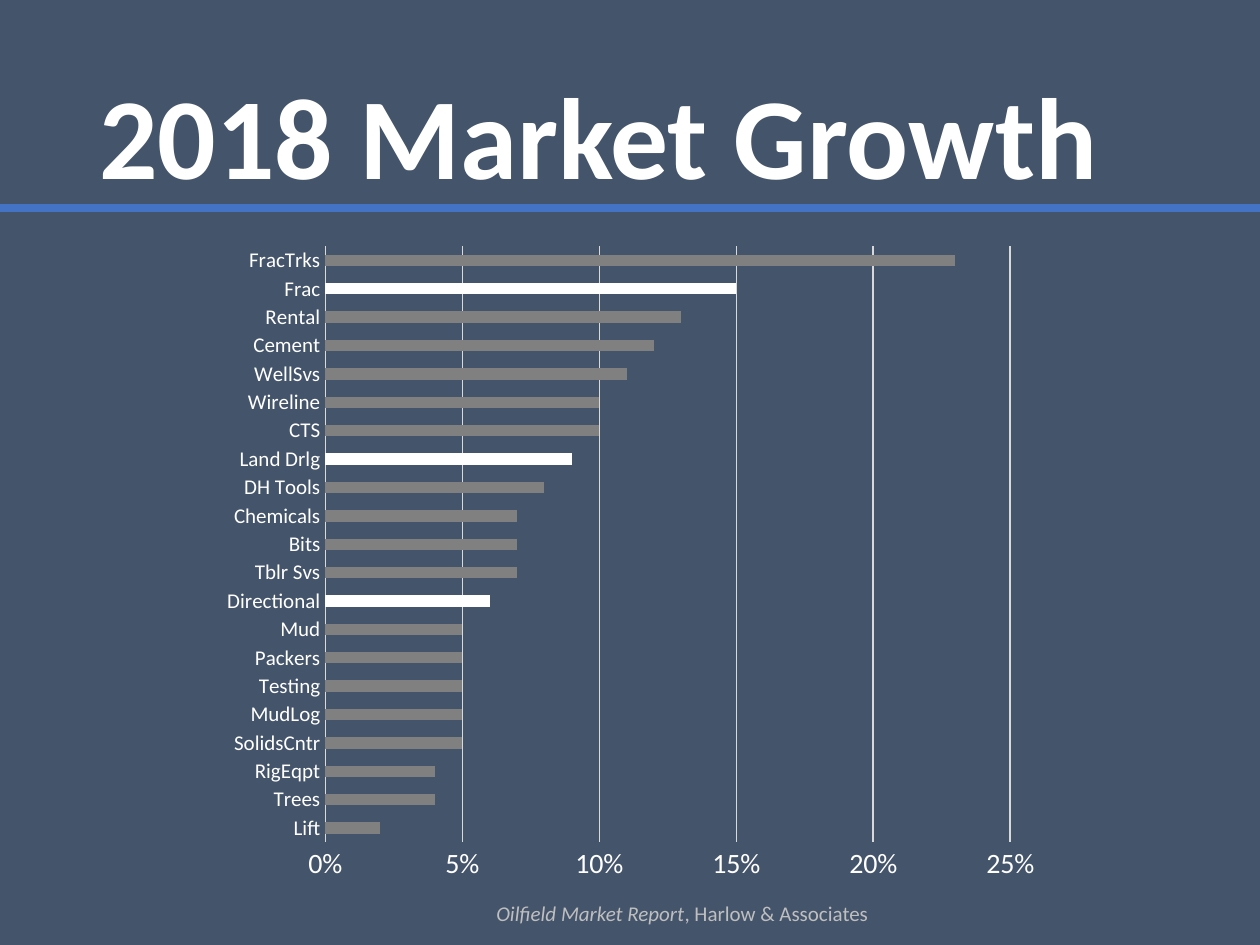
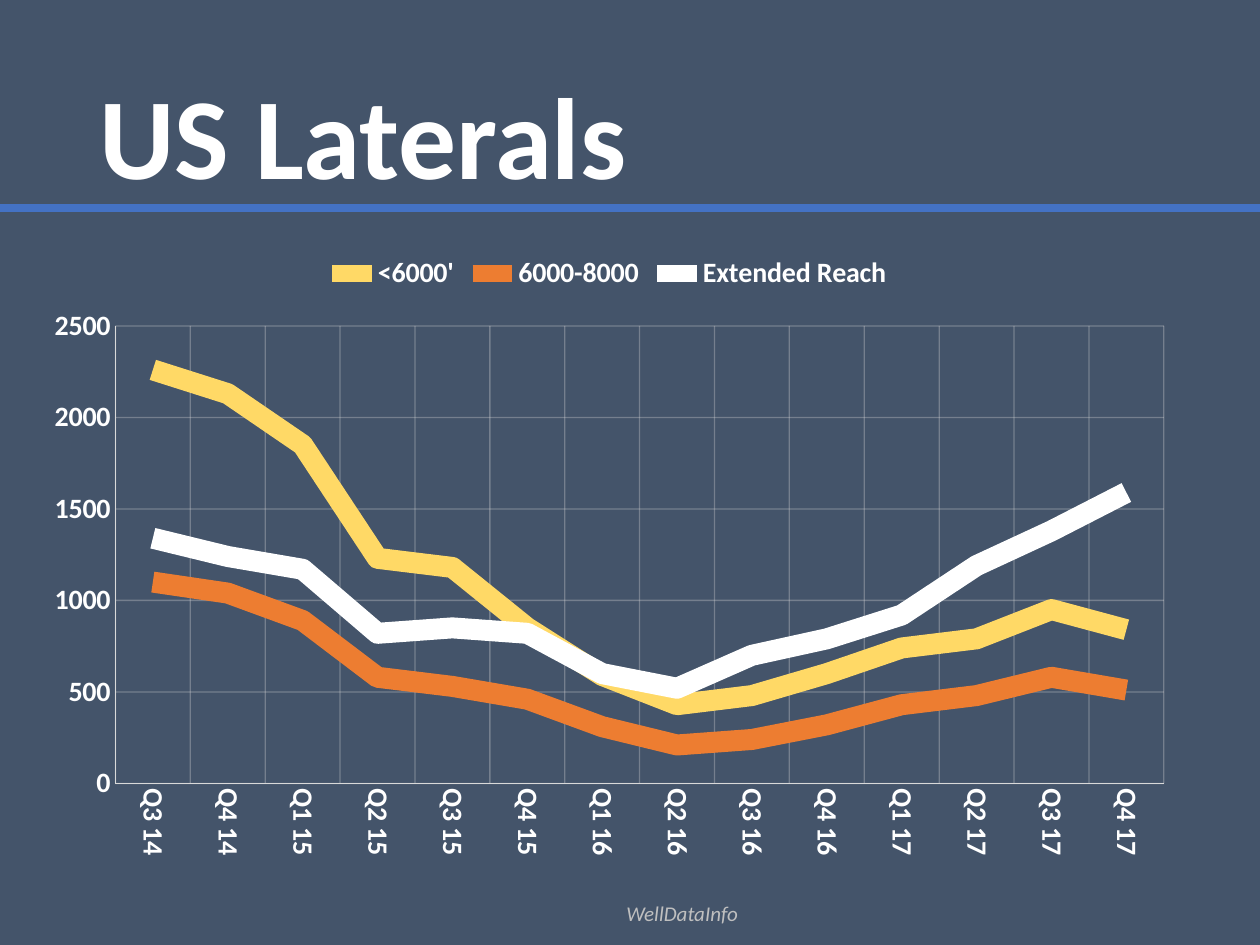
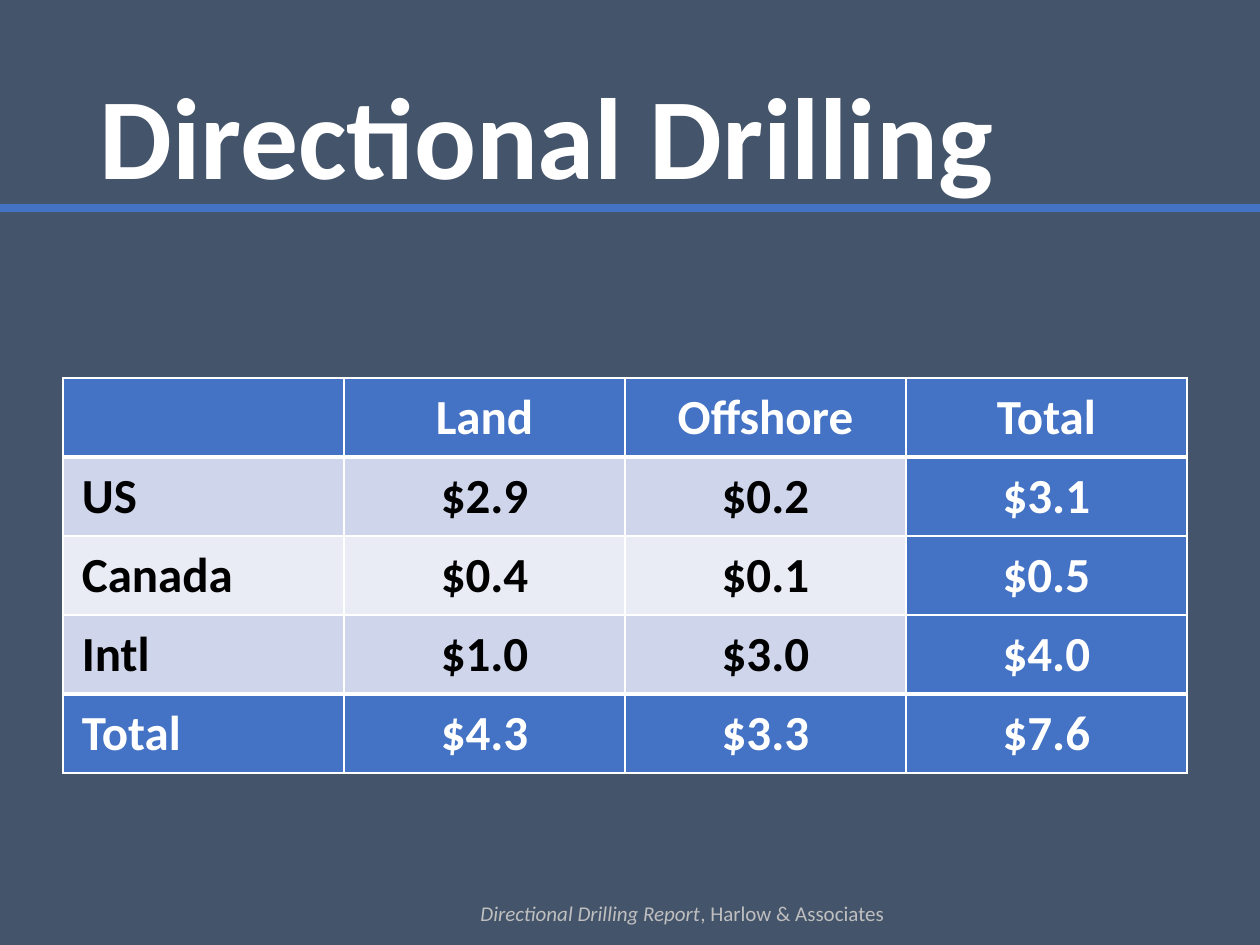
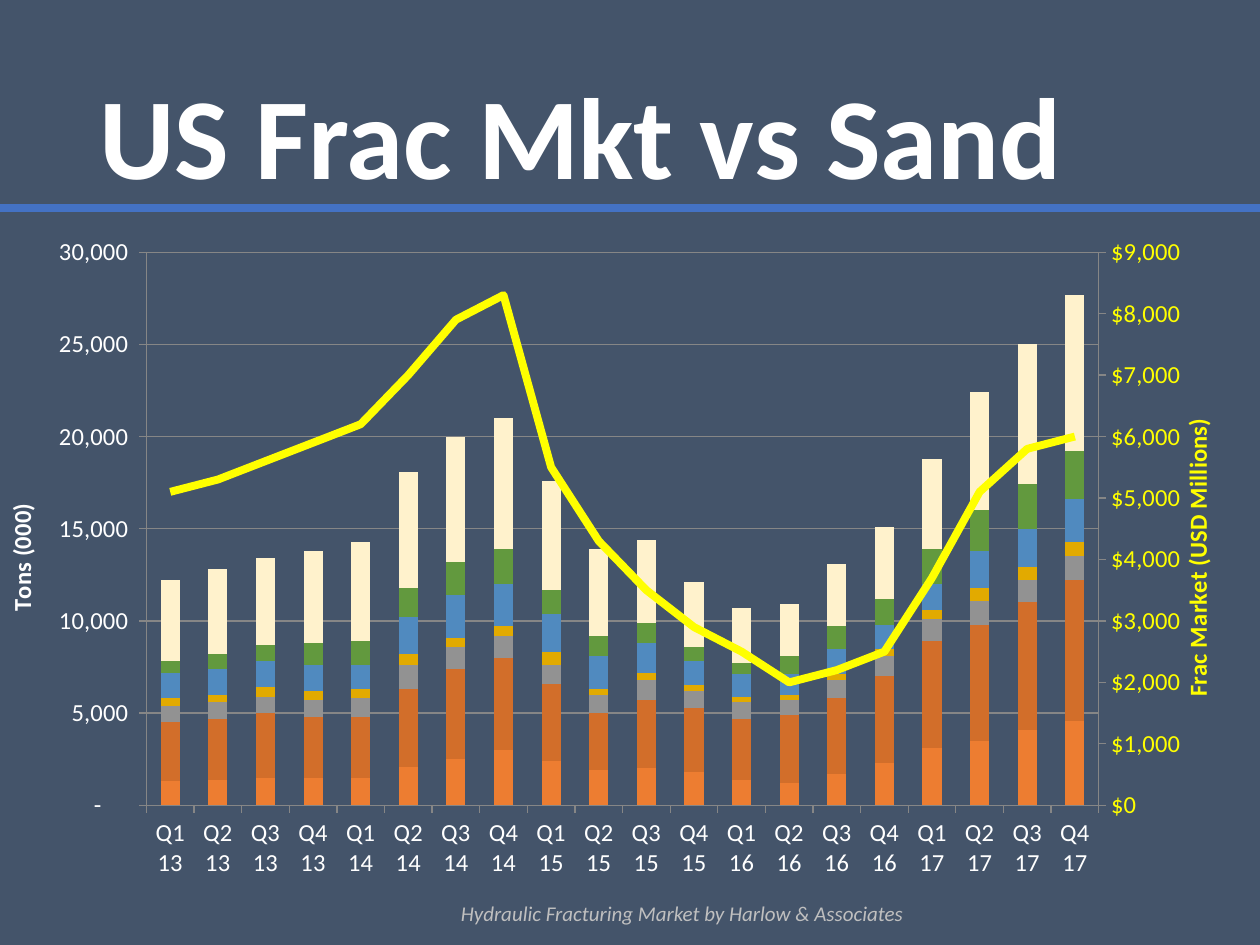
from copy import deepcopy
from dataclasses import dataclass

from pptx import Presentation
from pptx.chart.axis import CategoryAxis, ValueAxis
from pptx.chart.data import CategoryChartData
from pptx.dml.color import RGBColor
from pptx.enum.chart import XL_CHART_TYPE as ChartType
from pptx.enum.chart import XL_LEGEND_POSITION as LegendPosition
from pptx.enum.chart import XL_MARKER_STYLE as MarkerStyle
from pptx.enum.chart import XL_TICK_MARK as TickMark
from pptx.enum.shapes import MSO_CONNECTOR as ConnectorType
from pptx.enum.text import MSO_ANCHOR as Anchor
from pptx.enum.text import MSO_AUTO_SIZE as AutoSize
from pptx.enum.text import PP_ALIGN as Align
from pptx.oxml import parse_xml
from pptx.oxml.ns import nsdecls
from pptx.util import Inches, Pt


@dataclass(frozen=True)
class Theme:
    font: str = "Calibri"
    background: str = "44546A"
    text: str = "FFFFFF"
    dark_text: str = "000000"
    accent: str = "4472C4"
    footer: str = "BFBFBF"
    bar: str = "808080"
    grid: str = "D9D9D9"
    dim_grid: str = "868686"
    highlight: str = "FFFF00"
    bands: tuple = ("CFD5EA", "E9EBF5")
    title_size: int = 66
    footer_size: int = 12
    table_size: int = 28
    chart_size: int = 16
    small_size: int = 12
    combo_size: int = 14


THEME = Theme()
REPORT_FIRM = "Harlow & Associates"

GROWTH = [
    ("Lift", 0.02), ("Trees", 0.04), ("RigEqpt", 0.04), ("SolidsCntr", 0.05),
    ("MudLog", 0.05), ("Testing", 0.05), ("Packers", 0.05), ("Mud", 0.05),
    ("Directional", 0.06), ("Tblr Svs", 0.07), ("Bits", 0.07),
    ("Chemicals", 0.07), ("DH Tools", 0.08), ("Land Drlg", 0.09),
    ("CTS", 0.1), ("Wireline", 0.1), ("WellSvs", 0.11), ("Cement", 0.12),
    ("Rental", 0.13), ("Frac", 0.15), ("FracTrks", 0.23),
]
GROWTH_HIGHLIGHTS = ("Directional", "Land Drlg", "Frac")

LATERALS = [
    ("<6000'", "FFD966", (2260, 2130, 1850, 1230, 1180, 850, 590, 430, 480, 600, 740, 790, 950, 840)),
    ("6000-8000", "ED7D31", (1100, 1040, 890, 580, 530, 460, 310, 210, 240, 320, 430, 480, 580, 510)),
    ("Extended Reach", "FFFFFF", (1340, 1240, 1170, 820, 850, 820, 600, 520, 700, 790, 920, 1190, 1380, 1590)),
]

DRILLING = [
    ("", "Land", "Offshore", "Total"),
    ("US", "$2.9", "$0.2", "$3.1"),
    ("Canada", "$0.4", "$0.1", "$0.5"),
    ("Intl", "$1.0", "$3.0", "$4.0"),
    ("Total", "$4.3", "$3.3", "$7.6"),
]

SAND = [
    ("ED7D31", (1300, 1400, 1500, 1500, 1500, 2100, 2500, 3000, 2400, 1900,
                2000, 1800, 1400, 1200, 1700, 2300, 3100, 3500, 4100, 4600)),
    ("D26E2A", (3200, 3300, 3500, 3300, 3300, 4200, 4900, 5000, 4200, 3100,
                3700, 3500, 3300, 3700, 4100, 4700, 5800, 6300, 6900, 7600)),
    ("929292", (900, 900, 900, 900, 1000, 1300, 1200, 1200, 1000, 1000,
                1100, 900, 900, 800, 1000, 1100, 1200, 1300, 1200, 1300)),
    ("E2AA00", (400, 400, 500, 500, 500, 600, 500, 500, 700, 300,
                400, 300, 300, 300, 300, 400, 500, 700, 700, 800)),
    ("508ABF", (1400, 1400, 1400, 1400, 1300, 2000, 2300, 2300, 2100, 1800,
                1600, 1300, 1200, 1100, 1400, 1300, 1400, 2000, 2100, 2300)),
    ("62993E", (600, 800, 900, 1200, 1300, 1600, 1800, 1900, 1300, 1100,
                1100, 800, 600, 1000, 1200, 1400, 1900, 2200, 2400, 2600)),
    ("FFF2CC", (4400, 4600, 4700, 5000, 5400, 6300, 6800, 7100, 5900, 4700,
                4500, 3500, 3000, 2800, 3400, 3900, 4900, 6400, 7600, 8500)),
]
FRAC_MARKET = (5100, 5300, 5600, 5900, 6200, 7000, 7900, 8300, 5500, 4300,
               3500, 2900, 2500, 2000, 2200, 2500, 3700, 5100, 5800, 6000)
TONS_FORMAT = r'_(* #,##0_);_(* \(#,##0\);_(* "-"??_);_(@_)'


def quarters(first_year, last_year):
    return [f"Q{quarter} {year}" for year in range(first_year, last_year + 1) for quarter in range(1, 5)]


def color(value):
    return RGBColor.from_string(value)


def set_font(font, size, value, bold=None, italic=None):
    font.name = THEME.font
    font.size = Pt(size)
    font.color.rgb = color(value)
    font.bold = bold
    font.italic = italic


def fill_solid(item, value):
    item.fill.solid()
    item.fill.fore_color.rgb = color(value)


def set_line(line, value, width):
    line.color.rgb = color(value)
    line.width = Pt(width)


def add_text_box(slide, box):
    shape = slide.shapes.add_textbox(*map(Inches, box))
    shape.text_frame.word_wrap = True
    return shape.text_frame


def add_base_slide(presentation, title, source, publisher=""):
    slide = presentation.slides.add_slide(presentation.slide_layouts[6])
    fill_solid(slide.background, THEME.background)

    frame = add_text_box(slide, (0.69, 0.4, 8.62, 1.45))
    frame.vertical_anchor = Anchor.MIDDLE
    paragraph = frame.paragraphs[0]
    paragraph.text = title
    paragraph.line_spacing = 0.9
    set_font(paragraph.font, THEME.title_size, THEME.text, bold=True)

    rule = slide.shapes.add_connector(ConnectorType.STRAIGHT, 0, Inches(1.65), Inches(10), Inches(1.65))
    set_line(rule.line, THEME.accent, 4.25)
    rule.element.spPr.append(parse_xml(f"<a:effectLst {nsdecls('a')}/>"))

    frame = add_text_box(slide, (2.76, 7.1, 5.31, 0.3))
    frame.auto_size = AutoSize.SHAPE_TO_FIT_TEXT
    paragraph = frame.paragraphs[0]
    paragraph.alignment = Align.CENTER
    set_font(paragraph.font, THEME.footer_size, THEME.footer)
    for text, italic in ((source, True), (publisher, False)):
        if text:
            run = paragraph.add_run()
            run.text = text
            run.font.italic = italic
    return slide


def add_chart(slide, kind, box, categories, series, size, bold=False, number_format="General"):
    data = CategoryChartData(number_format=number_format)
    data.categories = categories
    for name, values in series:
        data.add_series(name, values)
    chart = slide.shapes.add_chart(kind, *map(Inches, box), data).chart
    chart.has_title = False
    chart.has_legend = False
    set_font(chart.font, size, THEME.text, bold)
    chart.plots[0].vary_by_categories = False
    return chart


def style_axis(axis, size, value=THEME.text, bold=False, line=None, grid=None, tick=TickMark.NONE):
    axis.major_tick_mark = tick
    axis.minor_tick_mark = TickMark.NONE
    set_font(axis.tick_labels.font, size, value, bold)
    if line:
        set_line(axis.format.line, *line)
    else:
        axis.format.line.fill.background()
    axis.has_major_gridlines = grid is not None
    if grid:
        set_line(axis.major_gridlines.format.line, *grid)


def set_scale(axis, maximum, step, number_format):
    axis.minimum_scale = 0
    axis.maximum_scale = maximum
    axis.major_unit = step
    axis.tick_labels.number_format = number_format
    axis.tick_labels.number_format_is_linked = False


def set_axis_title(axis, text, value):
    frame = axis.axis_title.text_frame
    frame.text = text
    set_font(frame.paragraphs[0].font, THEME.combo_size, value, bold=True)


def stack(plot):
    plot.gap_width = 150
    plot.overlap = 100


def build_growth(presentation):
    slide = add_base_slide(presentation, "2018 Market Growth", "Oilfield Market Report", f", {REPORT_FIRM}")
    names, values = zip(*GROWTH)
    chart = add_chart(slide, ChartType.BAR_STACKED, (1.67, 1.85, 6.67, 5.25), names,
                      [("Series 1", values)], THEME.chart_size, number_format="0%")
    stack(chart.plots[0])
    series = chart.plots[0].series[0]
    fill_solid(series.format, THEME.bar)
    for name in GROWTH_HIGHLIGHTS:
        fill_solid(series.points[names.index(name)].format, THEME.text)
    style_axis(chart.category_axis, THEME.small_size, line=(THEME.grid, 0.75))
    style_axis(chart.value_axis, THEME.chart_size, grid=(THEME.grid, 0.75))
    set_scale(chart.value_axis, 0.25, 0.05, "0%")


def build_laterals(presentation):
    slide = add_base_slide(presentation, "US Laterals", "WellDataInfo")
    chart = add_chart(slide, ChartType.LINE, (0.25, 1.92, 9.17, 4.97), quarters(14, 17)[2:],
                      [(name, values) for name, _, values in LATERALS], THEME.chart_size, bold=True)
    for series, (_, value, _) in zip(chart.plots[0].series, LATERALS):
        set_line(series.format.line, value, 12)
        series.smooth = False
        series.marker.style = MarkerStyle.NONE
    for axis in (chart.category_axis, chart.value_axis):
        style_axis(axis, THEME.chart_size, bold=True, line=(THEME.grid, 0.25), grid=(THEME.grid, 0.75))
    set_scale(chart.value_axis, 2500, 500, "General")
    for grid_color in chart.element.xpath(".//c:majorGridlines//a:srgbClr"):
        grid_color.append(parse_xml(f"<a:alpha {nsdecls('a')} val='32000'/>"))
    label_body = chart.element.xpath(".//c:catAx/c:txPr/a:bodyPr")[0]
    label_body.set("rot", "5400000")
    label_body.set("vert", "horz")
    chart.has_legend = True
    chart.legend.position = LegendPosition.TOP
    chart.legend.include_in_layout = False
    set_font(chart.legend.font, THEME.chart_size, THEME.text, bold=True)


def add_borders(cell_element, widths):
    properties = cell_element.get_or_add_tcPr()
    for index, (side, width) in enumerate(widths.items()):
        properties.insert(index, parse_xml(
            f"<a:{side} {nsdecls('a')} w='{Pt(width)}'><a:solidFill>"
            f"<a:srgbClr val='{THEME.text}'/></a:solidFill></a:{side}>"))


def build_drilling(presentation):
    slide = add_base_slide(presentation, "Directional Drilling", "Directional Drilling Report", f", {REPORT_FIRM}")
    row_count, column_count = len(DRILLING), len(DRILLING[0])
    frame = slide.shapes.add_table(row_count, column_count, *map(Inches, (0.5, 3, 8.92, 3.1)))
    table = frame.table
    table.first_row = table.horz_banding = False
    last_row, last_column = row_count - 1, column_count - 1
    for row, texts in enumerate(DRILLING):
        for column, text in enumerate(texts):
            cell = table.cell(row, column)
            cell.margin_left = cell.margin_right = Inches(0.15)
            cell.margin_top = cell.margin_bottom = Inches(0.08)
            accented = row in (0, last_row) or column == last_column
            fill_solid(cell, THEME.accent if accented else THEME.bands[(row - 1) % 2])
            paragraph = cell.text_frame.paragraphs[0]
            paragraph.text = text
            paragraph.alignment = Align.CENTER if column else Align.LEFT
            set_font(paragraph.font, THEME.table_size, THEME.text if accented else THEME.dark_text, bold=True)
    for index, cell_element in enumerate(frame.element.xpath(".//a:tc")):
        row = index // column_count
        add_borders(cell_element, {"lnL": 1, "lnR": 1, "lnT": 3 if row == last_row else 1,
                                   "lnB": 3 if row == 0 else 1})


def move_last_series_to_right_axis(chart):
    plot_area = chart.element.xpath(".//c:plotArea")[0]
    bars = plot_area.xpath("c:barChart")[0]
    category_axis = plot_area.xpath("c:catAx")[0]
    value_axis = plot_area.xpath("c:valAx")[0]
    series = bars.xpath("c:ser")[-1]
    for flag in series.xpath("c:invertIfNegative"):
        series.remove(flag)
    lines = parse_xml(
        f"<c:lineChart {nsdecls('c')}><c:grouping val='standard'/><c:varyColors val='0'/>"
        "<c:marker val='1'/><c:axId val='5001'/><c:axId val='5002'/></c:lineChart>")
    lines.insert(2, series)
    bars.addnext(lines)

    right_axis, hidden_axis = deepcopy(value_axis), deepcopy(category_axis)
    for axis, own_id, cross_id in ((right_axis, "5002", "5001"), (hidden_axis, "5001", "5002")):
        axis.xpath("c:axId")[0].set("val", own_id)
        axis.xpath("c:crossAx")[0].set("val", cross_id)
    right_axis.xpath("c:axPos")[0].set("val", "r")
    right_axis.xpath("c:crosses")[0].set("val", "max")
    value_axis.addnext(right_axis)
    right_axis.addnext(hidden_axis)
    CategoryAxis(hidden_axis).visible = False
    return ValueAxis(right_axis)


def set_plot_layout(chart, x, y, width, height):
    plot_area = chart.element.xpath(".//c:plotArea")[0]
    for layout in plot_area.xpath("c:layout"):
        plot_area.remove(layout)
    plot_area.insert(0, parse_xml(
        f"<c:layout {nsdecls('c')}><c:manualLayout><c:layoutTarget val='inner'/>"
        "<c:xMode val='edge'/><c:yMode val='edge'/>"
        f"<c:x val='{x}'/><c:y val='{y}'/><c:w val='{width}'/><c:h val='{height}'/>"
        "</c:manualLayout></c:layout>"))


def build_sand(presentation):
    slide = add_base_slide(presentation, "US Frac Mkt vs Sand", f"Hydraulic Fracturing Market by {REPORT_FIRM}")
    all_values = [values for _, values in SAND] + [FRAC_MARKET]
    chart = add_chart(slide, ChartType.COLUMN_STACKED, (0, 1.74, 9.69, 5.23), quarters(13, 17),
                      [(f"Series {number}", values) for number, values in enumerate(all_values, 1)],
                      THEME.combo_size)
    stack(chart.plots[0])
    thin_line = (THEME.dim_grid, 0.75)
    style_axis(chart.category_axis, THEME.combo_size, line=thin_line, tick=TickMark.OUTSIDE)
    style_axis(chart.value_axis, THEME.combo_size, line=thin_line, grid=thin_line, tick=TickMark.OUTSIDE)
    set_scale(chart.value_axis, 30000, 5000, TONS_FORMAT)
    set_axis_title(chart.value_axis, "Tons (000)", THEME.text)
    chart.element.xpath(".//c:valAx/c:title//a:bodyPr")[0].set("rot", "-5400000")

    right_axis = move_last_series_to_right_axis(chart)
    style_axis(right_axis, THEME.combo_size, THEME.highlight, line=thin_line, tick=TickMark.OUTSIDE)
    set_scale(right_axis, 9000, 1000, '"$"#,##0')
    set_axis_title(right_axis, "Frac Market (USD Millions)", THEME.highlight)
    set_plot_layout(chart, 0.12, 0.05, 0.78, 0.84)

    bars, lines = chart.plots
    for series, (value, _) in zip(bars.series, SAND):
        fill_solid(series.format, value)
    market = lines.series[0]
    set_line(market.format.line, THEME.highlight, 4.5)
    market.marker.style = MarkerStyle.NONE
    market.smooth = False


def main():
    presentation = Presentation()
    presentation.slide_width = Inches(10)
    presentation.slide_height = Inches(7.5)
    for build in (build_growth, build_laterals, build_drilling, build_sand):
        build(presentation)
    presentation.save("out.pptx")


if __name__ == "__main__":
    main()
